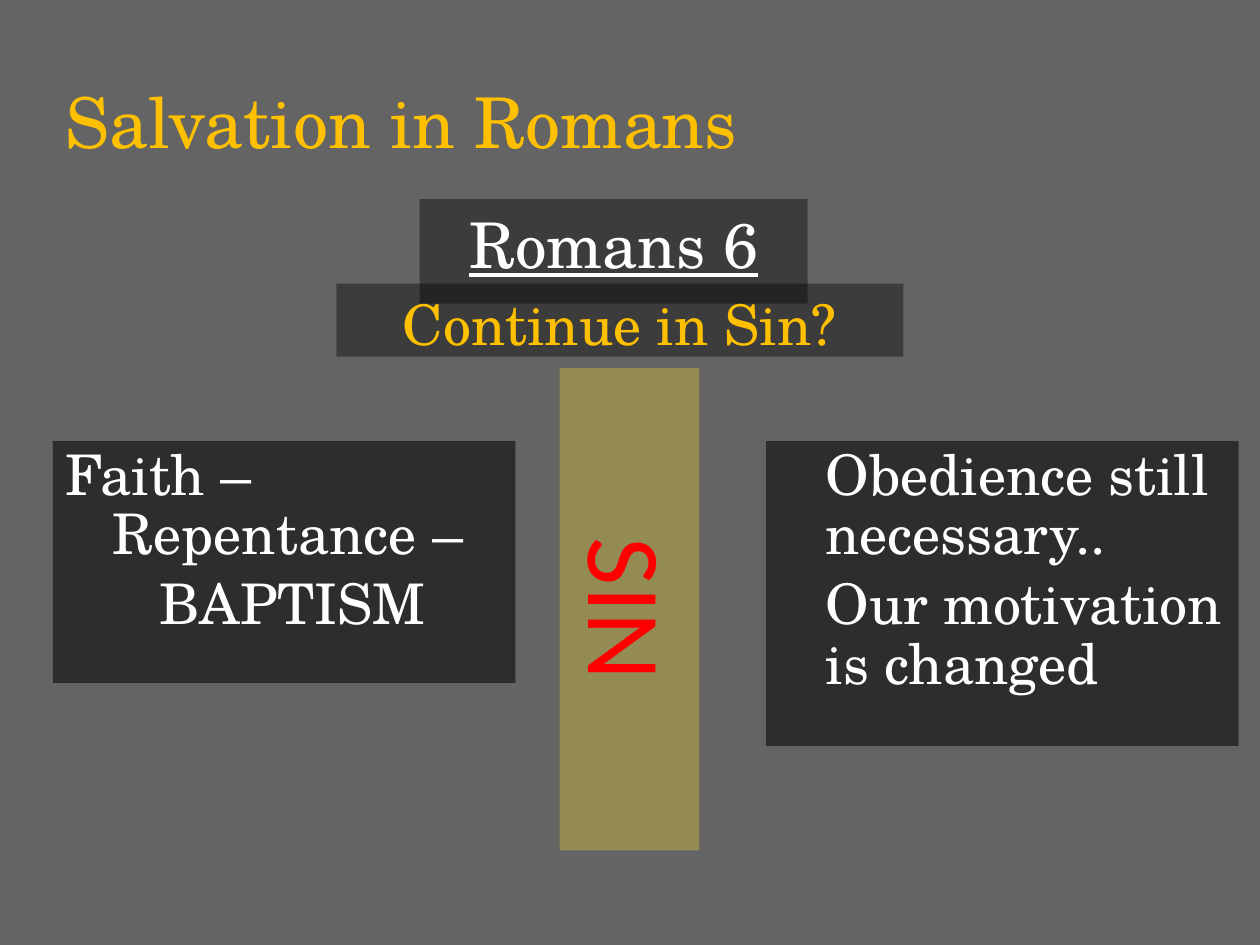
from pptx import Presentation
from pptx.dml.color import RGBColor
from pptx.enum.shapes import MSO_SHAPE
from pptx.enum.text import MSO_ANCHOR, PP_ALIGN
from pptx.oxml import parse_xml
from pptx.oxml.ns import nsdecls, qn
from pptx.util import Inches, Pt

RECTANGLE = MSO_SHAPE.RECTANGLE
TOP, MIDDLE = MSO_ANCHOR.TOP, MSO_ANCHOR.MIDDLE
LEFT, CENTER = PP_ALIGN.LEFT, PP_ALIGN.CENTER
SERIF, SANS = "TeX Gyre Schola", "Calibri"
GRAY, BLACK, WHITE = "646464", "000000", "FFFFFF"
GOLD, OLIVE, RED = "FFC000", "948A54", "FF0000"
STEP = Inches(0.375)  # one indent level


def rgb(value):
    return RGBColor.from_string(value)


def set_values(target, values):
    for name, value in values.items():
        setattr(target, name, value)


def write(para, text, size, color, font=SERIF, underline=None):
    span = para.add_run()
    span.text = text
    set_values(span.font, {"name": font, "size": Pt(size), "underline": underline})
    span.font.color.rgb = rgb(color)


def add_panel(page, box, color, opacity=100):
    panel = page.shapes.add_shape(RECTANGLE, *map(Inches, box))
    panel.shadow.inherit = False
    panel.fill.solid()
    panel.fill.fore_color.rgb = rgb(color)
    panel.line.fill.background()
    if opacity < 100:
        color_tag = panel.fill._xPr.find(qn("a:solidFill"))[0]
        color_tag.append(parse_xml(f'<a:alpha {nsdecls("a")} val="{opacity * 1000}"/>'))
    set_values(panel.text_frame, {"word_wrap": True, "vertical_anchor": TOP})
    return panel


def add_title(page, box, text):
    title = page.shapes.title
    left, top, width, height = map(Inches, box)
    set_values(title, {"left": left, "top": top, "width": width, "height": height})
    title.text_frame.vertical_anchor = MIDDLE
    para = title.text_frame.paragraphs[0]
    para.alignment = LEFT
    write(para, text, 40, GOLD)


def add_label(page, box, text, size, color, fill, opacity=100, **style):
    label = add_panel(page, box, fill, opacity)
    para = label.text_frame.paragraphs[0]
    para.alignment = CENTER
    write(para, text, size, color, **style)
    return label


def add_points(page, box, points):
    """Each point is its text, its left margin and its first-line indent."""
    frame = add_panel(page, box, BLACK, 55).text_frame
    for index, (text, margin, indent) in enumerate(points):
        para = frame.add_paragraph() if index else frame.paragraphs[0]
        set_values(para, {"alignment": LEFT, "line_spacing": Pt(34),
                          "space_before": Pt(6 if index else 0)})
        properties = para._p.get_or_add_pPr()
        properties.set("marL", str(margin))
        properties.set("indent", str(indent))
        write(para, text, 32, WHITE)


def main():
    deck = Presentation()
    set_values(deck, {"slide_width": Inches(10), "slide_height": Inches(7.5)})
    page = deck.slides.add_slide(deck.slide_layouts[5])
    page.background.fill.solid()
    page.background.fill.fore_color.rgb = rgb(GRAY)

    # Headings
    add_title(page, (0.42, 0.33, 6.58, 1.25), "Salvation in Romans")
    add_label(page, (3.33, 1.58, 3.08, 0.83), "Romans 6", 36, WHITE, BLACK, 40,
              underline=True)
    add_label(page, (2.67, 2.25, 4.5, 0.58), "Continue in Sin?", 32, GOLD, BLACK, 40)

    # Upright barrier between the two sides
    barrier = add_label(page, (3.08, 4.28, 3.83, 1.11), "SIN", 60, RED, OLIVE, font=SANS)
    barrier.rotation = 90

    # Before and after
    add_points(page, (0.42, 3.5, 3.67, 1.92), [
        ("Faith – Repentance –", STEP, -STEP),
        ("BAPTISM", 2 * STEP, 0),
    ])
    add_points(page, (6.08, 3.5, 3.75, 2.42), [
        ("Obedience still necessary..", STEP, 0),
        ("Our motivation is changed", STEP, 0),
    ])
    deck.save("out.pptx")


if __name__ == "__main__":
    main()
